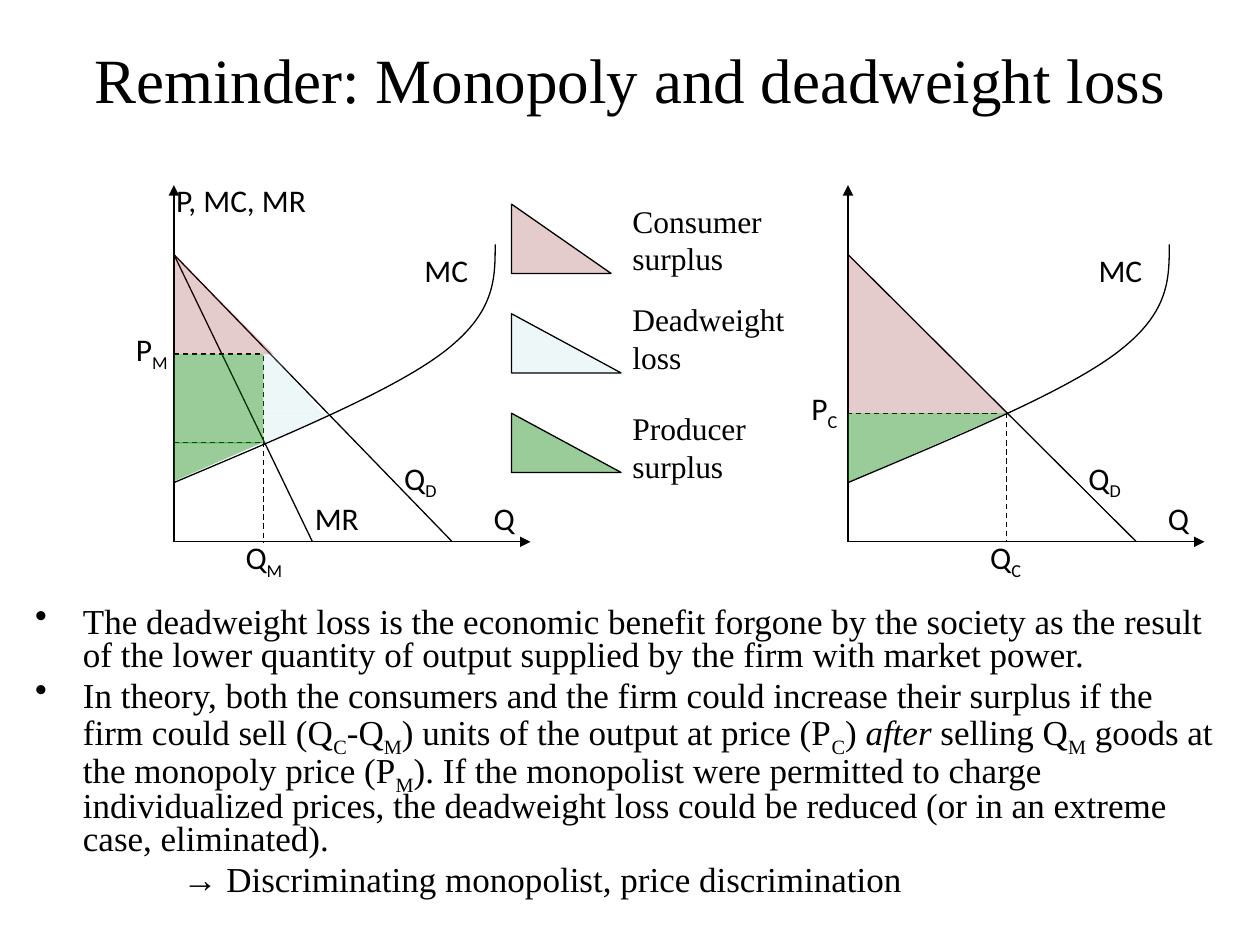
from lxml.etree import SubElement
from pptx import Presentation
from pptx.dml.color import RGBColor
from pptx.enum.dml import MSO_LINE
from pptx.enum.shapes import MSO_CONNECTOR, MSO_SHAPE
from pptx.enum.text import MSO_ANCHOR, PP_ALIGN
from pptx.oxml.ns import qn
from pptx.util import Pt

PX = 9144  # EMU per px, 100 px to the inch
SERIF, SANS = "Times New Roman", "Calibri"
HEX = {"ink": "000000", "consumer": "800000", "loss": "BBE0E3", "producer": "008000"}
ALPHA = {"consumer": 20, "loss": 25, "producer": 40}

# Content: a run is (text, style)
TITLE = "Reminder: Monopoly and deadweight loss"
BULLETS = [
    [("The deadweight loss is the economic benefit forgone by the society as the "
      "result of the lower quantity of output supplied by the firm with market power.", "")],
    [("In theory, both the consumers and the firm could increase their surplus if the "
      "firm could sell (Q", ""), ("C", "sub"), ("-Q", ""), ("M", "sub"),
     (") units of the output at price (P", ""), ("C", "sub"), (") ", ""),
     ("after", "italic"), (" selling Q", ""), ("M", "sub"),
     (" goods at the monopoly price (P", ""), ("M", "sub"),
     ("). If the monopolist were permitted to charge individualized prices, the "
      "deadweight loss could be reduced (or in an extreme case, eliminated).", "")],
]
RESULT = [("→ Discriminating monopolist, price discrimination", "")]

# Diagram geometry; x counts from the price axis of each panel
LEFT, RIGHT = 138, 673
TOP, BASE, PEAK, COST = 147, 430, 202, 383
WIDE = 283
CURVE = [(0, 383), (85, 347), (170, 312), (212, 281), (255, 249), (255, 222), (255, 194)]
PANELS = [
    {"x": LEFT,
     "lines": [(0, PEAK, 110, BASE), (0, PEAK, 221, BASE)],
     "dashes": [(0, 351, 71, 351), (71, 351, 71, 281), (0, 281, 71, 281), (71, 351, 71, BASE)],
     "areas": [("loss", 71, 273, 47, 55, "tri"), ("loss", 71, 328, 55, 24, "flip"),
               ("consumer", 0, PEAK, 79, 79, "tri"), ("producer", 0, 281, 71, 71, "box"),
               ("producer", 0, 351, 71, 31, "flip")],
     "labels": [("P, MC, MR", "", -8, 139, 126), ("MR", "", 102, 391, 55),
                ("Q", "D", 173, 359, 55), ("P", "M", -40, 257, 55), ("Q", "M", 47, 422, 55)]},
    {"x": RIGHT,
     "lines": [(0, PEAK, 229, BASE)],
     "dashes": [(118, 328, 0, 328), (126, 328, 126, BASE)],
     "areas": [("consumer", 0, PEAK, 126, 126, "tri"), ("producer", 0, 328, 126, 55, "flip")],
     "labels": [("Q", "D", 181, 359, 55), ("P", "C", -39, 304, 55), ("Q", "C", 103, 422, 55)]},
]
SHARED = [("Q", "", 244, 391, 55), ("MC", "", 189, 194, 79)]
LEGEND = [("Consumer surplus", "consumer", 162, 79, 55, 155),
          ("Deadweight loss", "loss", 249, 87, 47, 233),
          ("Producer surplus", "producer", 328, 87, 47, 320)]


def emu(*nums):
    return [n * PX for n in nums]


def color(name):
    return RGBColor.from_string(HEX[name])


def ink(line):
    line.color.rgb = color("ink")
    line.width = Pt(0.75)


def write(par, runs, font, size):
    for text, style in runs:
        run = par.add_run()
        run.text = text
        face = run.font
        face.name, face.size = font, Pt(size)
        face.color.rgb = color("ink")
        if style == "italic":
            face.italic = True
        elif style == "sub":
            run._r.get_or_add_rPr().set("baseline", "-25000")


def frame(slide, *box):
    body = slide.shapes.add_textbox(*emu(*box)).text_frame
    body.word_wrap = True
    return body


def label(slide, text, sub, x, y, w):
    runs = [(text, "")] + ([(sub, "sub")] if sub else [])
    write(frame(slide, x, y, w, 40).paragraphs[0], runs, SANS, 18)


def link(slide, x1, y1, x2, y2, dash=False, arrow=False):
    item = slide.shapes.add_connector(MSO_CONNECTOR.STRAIGHT, *emu(x1, y1, x2, y2))
    ink(item.line)
    if dash:
        item.line.dash_style = MSO_LINE.DASH
    if arrow:
        SubElement(item.line._get_or_add_ln(), qn("a:tailEnd"), type="triangle")
    SubElement(item._element.spPr, qn("a:effectLst"))


def area(slide, kind, x, y, w, h, form="tri", edge=False):
    preset = MSO_SHAPE.RECTANGLE if form == "box" else MSO_SHAPE.RIGHT_TRIANGLE
    item = slide.shapes.add_shape(preset, *emu(x, y, w, h))
    item.shadow.inherit = False
    item.fill.solid()
    item.fill.fore_color.rgb = color(kind)
    tint = item._element.spPr.find(".//" + qn("a:srgbClr"))
    SubElement(tint, qn("a:alpha"), val=str(ALPHA[kind] * 1000))
    if form == "flip":
        item._element.spPr.find(qn("a:xfrm")).set("flipV", "1")
    if edge:
        ink(item.line)
    else:
        item.line.fill.background()


def curve(slide, left):
    points = [(left + x, y) for x, y in CURVE]
    pen = slide.shapes.build_freeform(*points[0], scale=PX)
    pen.add_line_segments(points[1:], close=False)
    item = pen.convert_to_shape()
    item.shadow.inherit = False
    item.fill.background()
    ink(item.line)
    # Turn each three straight steps into one Bezier step
    track = item._element.spPr.find(".//" + qn("a:path"))
    steps = track.findall(qn("a:lnTo"))
    for i in range(0, len(steps), 3):
        bend = SubElement(track, qn("a:cubicBezTo"))
        for step in steps[i:i + 3]:
            bend.append(step[0])
            track.remove(step)


def panel(slide, data):
    left = data["x"]
    link(slide, left, BASE, left, TOP, arrow=True)
    link(slide, left, BASE, left + WIDE, BASE, arrow=True)
    for key in ("lines", "dashes"):
        for x1, y1, x2, y2 in data[key]:
            link(slide, left + x1, y1, left + x2, y2, dash=key == "dashes")
    for kind, x, *rest in data["areas"]:
        area(slide, kind, left + x, *rest)
    for text, sub, x, y, w in SHARED + data["labels"]:
        label(slide, text, sub, left + x, y, w)
    curve(slide, left)


def notes(slide):
    body = frame(slide, 18, 477, 955, 260)
    for i, runs in enumerate(BULLETS + [RESULT]):
        par = body.add_paragraph() if i else body.paragraphs[0]
        par.line_spacing = 0.8
        if i:
            par.space_before = Pt(4)
        props = par._p.get_or_add_pPr()
        if runs is RESULT:
            props.set("marL", str(117 * PX))
        else:
            props.set("marL", str(38 * PX))
            props.set("indent", str(-38 * PX))
            SubElement(props, qn("a:buChar"), char="•")
        write(par, runs, SERIF, 20)


def main():
    deck = Presentation()
    deck.slide_width, deck.slide_height = emu(1000, 750)
    slide = deck.slides.add_slide(deck.slide_layouts[6])

    # Title
    head = frame(slide, 0, 0, 1000, 125)
    head.vertical_anchor = MSO_ANCHOR.MIDDLE
    head.paragraphs[0].alignment = PP_ALIGN.CENTER
    write(head.paragraphs[0], [(TITLE, "")], SERIF, 36)

    # Diagrams
    for data in PANELS:
        panel(slide, data)

    # Legend
    for text, kind, y, w, h, top in LEGEND:
        area(slide, kind, 406, y, w, h, edge=True)
        write(frame(slide, 492, top, 181, 71).paragraphs[0], [(text, "")], SERIF, 18)

    notes(slide)
    deck.save("out.pptx")


if __name__ == "__main__":
    main()
